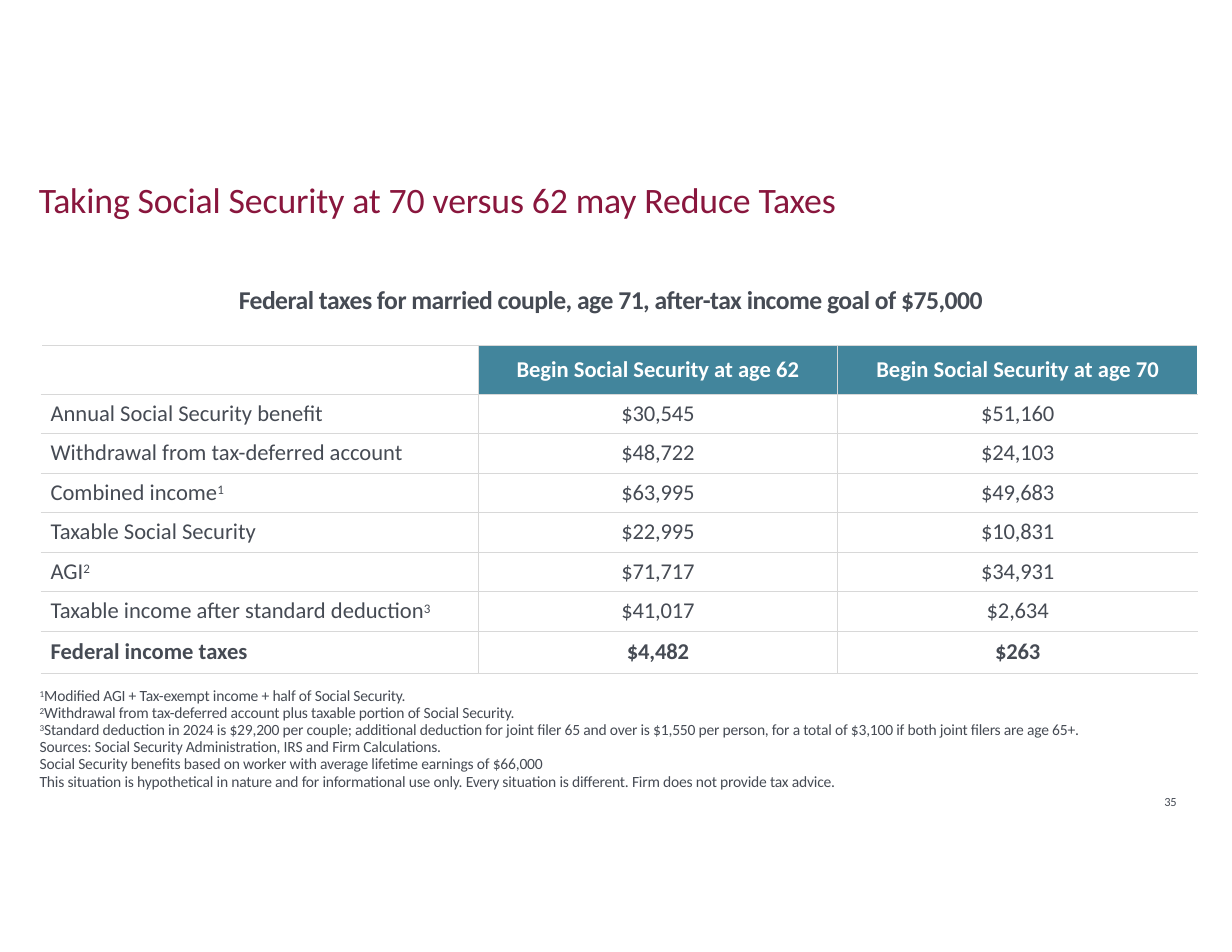
from dataclasses import dataclass

from lxml import etree
from pptx import Presentation
from pptx.dml.color import RGBColor
from pptx.enum.text import MSO_ANCHOR, PP_ALIGN
from pptx.oxml.ns import qn
from pptx.util import Pt

LEFT, CENTER = PP_ALIGN.LEFT, PP_ALIGN.CENTER
TOP = MSO_ANCHOR.TOP


@dataclass(frozen=True)
class Theme:
    font: str = "Calibri"
    title_color: str = "89163D"
    text_color: str = "464B54"
    header_fill: str = "42859C"
    header_text: str = "FFFFFF"
    border: str = "D8D8D8"
    title_size: float = 23
    subtitle_size: float = 16.5
    table_size: float = 14.5
    note_size: float = 10
    number_size: float = 8


class SlideBuilder:
    def __init__(self, slide, theme):
        self.slide = slide
        self.theme = theme

    def add_run(self, paragraph, text, size, color, bold=False, spacing=0, raised=False):
        run = paragraph.add_run()
        run.text = text
        run.font.name = self.theme.font
        run.font.size = Pt(size)
        run.font.bold = bold
        run.font.color.rgb = RGBColor.from_string(color)
        properties = run._r.get_or_add_rPr()
        if spacing:
            properties.set("spc", str(round(spacing * 100)))
        if raised:
            properties.set("baseline", "25000")

    def add_marked_text(self, paragraph, text, size, color, **style):
        """Add text in which ^ comes before each one-digit note mark."""
        plain, *marked = text.split("^")
        if plain:
            self.add_run(paragraph, plain, size, color, **style)
        for part in marked:
            self.add_run(paragraph, part[0], size, color, raised=True, **style)
            if part[1:]:
                self.add_run(paragraph, part[1:], size, color, **style)

    def add_text(self, box, lines, size, color=None, inset=(0, 0), line_spacing=None, **style):
        frame = self.slide.shapes.add_textbox(*map(Pt, box)).text_frame
        frame.word_wrap = True
        frame.vertical_anchor = TOP
        frame.margin_left, frame.margin_top = map(Pt, inset)
        frame.margin_right = frame.margin_bottom = 0
        for index, line in enumerate(lines):
            paragraph = frame.add_paragraph() if index else frame.paragraphs[0]
            if line_spacing:
                paragraph.line_spacing = Pt(line_spacing)
            self.add_marked_text(paragraph, line, size, color or self.theme.text_color, **style)

    def add_border(self, cell, side, width):
        line = etree.SubElement(cell._tc.get_or_add_tcPr(), qn(f"a:ln{side}"), w=str(Pt(width)))
        fill = etree.SubElement(line, qn("a:solidFill"))
        etree.SubElement(fill, qn("a:srgbClr"), val=self.theme.border)

    def fill_cell(self, cell, text, row, column, last_row, last_column, top_margin):
        theme = self.theme
        is_header = row == 0
        cell.margin_left = Pt(6 if column == 0 else 0)
        cell.margin_top = Pt(top_margin)
        cell.margin_right = cell.margin_bottom = 0
        cell.vertical_anchor = TOP
        if column > 0:
            self.add_border(cell, "L", 0.75)
        if column < last_column:
            self.add_border(cell, "R", 0.75)
        self.add_border(cell, "T", 1 if is_header else 0.75)
        self.add_border(cell, "B", 0.75)
        if is_header and column > 0:
            cell.fill.solid()
            cell.fill.fore_color.rgb = RGBColor.from_string(theme.header_fill)
        else:
            cell.fill.background()
        paragraph = cell.text_frame.paragraphs[0]
        paragraph.alignment = CENTER if column else LEFT
        self.add_marked_text(
            paragraph, text, theme.table_size,
            theme.header_text if is_header else theme.text_color,
            bold=row in (0, last_row),
            spacing=-0.1 if column and not is_header else 0,
        )

    def add_table(self, left, top, widths, heights, margins, rows):
        table = self.slide.shapes.add_table(
            len(rows), len(widths), Pt(left), Pt(top), Pt(sum(widths)), Pt(sum(heights))
        ).table
        table.first_row = table.horz_banding = False
        for column, width in zip(table.columns, widths):
            column.width = Pt(width)
        for row, height in zip(table.rows, heights):
            row.height = Pt(height)
        for row, values in enumerate(rows):
            for column, text in enumerate(values):
                self.fill_cell(table.cell(row, column), text, row, column,
                               len(rows) - 1, len(widths) - 1, margins[row])


TAX_ROWS = [
    ("", "Begin Social Security at age 62", "Begin Social Security at age 70"),
    ("Annual Social Security benefit", "$30,545", "$51,160"),
    ("Withdrawal from tax-deferred account", "$48,722", "$24,103"),
    ("Combined income^1", "$63,995", "$49,683"),
    ("Taxable Social Security", "$22,995", "$10,831"),
    ("AGI^2", "$71,717", "$34,931"),
    ("Taxable income after standard deduction^3", "$41,017", "$2,634"),
    ("Federal income taxes", "$4,482", "$263"),
]
FOOTNOTES = [
    "^1Modified AGI + Tax-exempt income + half of Social Security.",
    "^2Withdrawal from tax-deferred account plus taxable portion of Social Security.",
    "^3Standard deduction in 2024 is $29,200 per couple; additional deduction for joint filer 65 "
    "and over is $1,550 per person, for a total of $3,100 if both joint filers are age 65+.",
    "Sources: Social Security Administration, IRS and Firm Calculations.",
    "Social Security benefits based on worker with average lifetime earnings of $66,000",
]
DISCLAIMER = ("This situation is hypothetical in nature and for informational use only. "
              "Every situation is different. Firm does not provide tax advice.")


def main():
    presentation = Presentation()
    presentation.slide_width, presentation.slide_height = Pt(792), Pt(612)
    slide = presentation.slides.add_slide(presentation.slide_layouts[6])
    theme = Theme()
    builder = SlideBuilder(slide, theme)

    builder.add_text((24, 113, 520, 29.5), ["Taking Social Security at 70 versus 62 may Reduce Taxes"],
                     theme.title_size, theme.title_color, inset=(1, 1.5), spacing=-0.1)
    builder.add_text((152.5, 181.5, 492, 21.5),
                     ["Federal taxes for married couple, age 71, after-tax income goal of $75,000"],
                     theme.subtitle_size, inset=(1, 1), bold=True, spacing=-0.3)
    body_rows = len(TAX_ROWS) - 2
    builder.add_table(26.5, 222.2, [280.8, 231.3, 231.3],
                      [31.2] + [25.4] * body_rows + [27.5],
                      [6.5] + [3.6] * body_rows + [4.3], TAX_ROWS)
    builder.add_text((22.5, 441, 686, 57.5), FOOTNOTES, theme.note_size,
                     inset=(3, 1), line_spacing=10.9, spacing=-0.1)
    builder.add_text((24.5, 498, 526, 12), [DISCLAIMER], theme.note_size,
                     inset=(1, 0), line_spacing=10.4, spacing=-0.1)
    builder.add_text((747.5, 511, 12, 10), ["35"], theme.number_size,
                     inset=(1, 0), line_spacing=8.8, spacing=-0.2)

    presentation.save("out.pptx")


if __name__ == "__main__":
    main()
